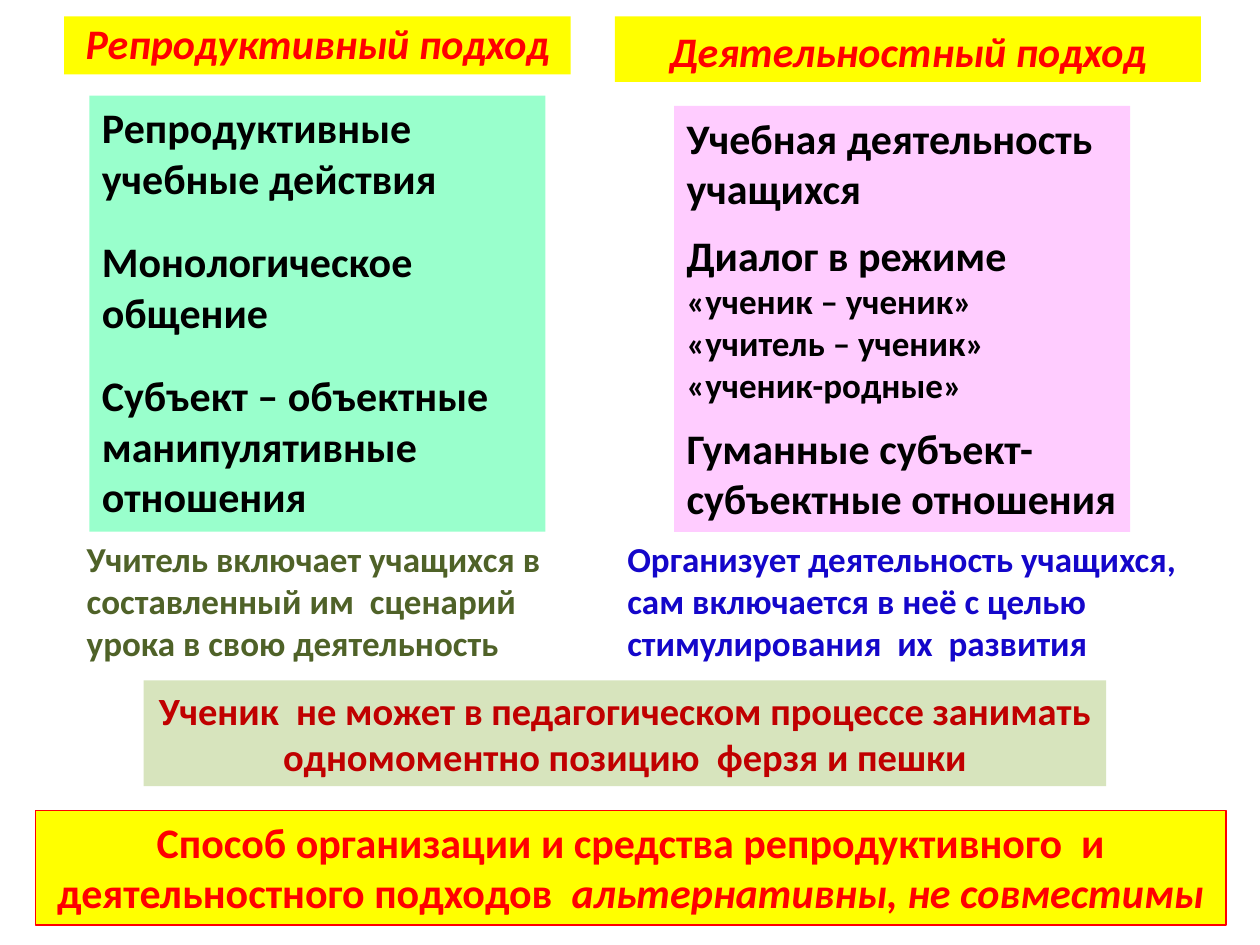
from pptx import Presentation
from pptx.dml.color import RGBColor
from pptx.enum import text as t
from pptx.util import Pt

FONT = "Calibri"
YELLOW, RED, BLACK = "FFFF00", "FF0000", "000000"

# Content: a paragraph is (text, size, space before)
HEADINGS = [
    ("Репродуктивный подход", (36.7, 9.4, 289.4, 33.1)),
    ("Деятельностный подход", (351.4, 9.4, 334.8, 37.4)),
]
FEATURES = [
    ((51.1, 54.7, 260.6, 249.1), "99FFCC", [
        ("Репродуктивные учебные действия", 24, 0),
        ("Монологическое общение", 24, 19),
        ("Субъект – объектные манипулятивные отношения", 24, 19),
    ]),
    ((385.2, 60.5, 260.6, 243.4), "FFCCFF", [
        ("Учебная деятельность учащихся", 24, 0),
        ("Диалог в режиме", 24, 9.5),
        ("«ученик – ученик»", 20, 0),
        ("«учитель – ученик»", 20, 0),
        ("«ученик-родные»", 20, 0),
        ("Гуманные субъект- субъектные отношения", 24, 9.5),
    ]),
]
TEACHER_ROLES = [
    ("Учитель включает учащихся в составленный им  сценарий "
     "урока в свою деятельность", (42.5, 303.8, 277.9, 79.9), "4F6228"),
    ("Организует деятельность учащихся, сам включается в неё с целью "
     "стимулирования  их  развития", (351.4, 303.8, 329, 79.9), "1406CA"),
]
PUPIL_NOTE = ("Ученик  не может в педагогическом процессе занимать "
              "одномоментно позицию  ферзя и пешки")
CONCLUSION = ("Способ организации и средства репродуктивного  и "
              "деятельностного подходов  ")
CONCLUSION_STRESS = "альтернативны, не совместимы"


def color(value):
    return RGBColor.from_string(value)


def add_box(page, at, fill=None, line=None, anchor=t.MSO_ANCHOR.TOP):
    box = page.shapes.add_textbox(*(Pt(length) for length in at))
    if fill:
        box.fill.solid()
        box.fill.fore_color.rgb = color(fill)
    if line:
        box.line.color.rgb = color(line)
        box.line.width = Pt(0.75)
    frame = box.text_frame
    frame.word_wrap = True
    frame.auto_size = t.MSO_AUTO_SIZE.NONE
    frame.vertical_anchor = anchor
    return frame


def add_span(para, text, size=24, ink=BLACK, italic=False):
    span = para.add_run()
    span.text = text
    font = span.font
    font.name, font.size, font.bold, font.italic = FONT, Pt(size), True, italic
    font.color.rgb = color(ink)


def main():
    deck = Presentation()
    deck.slide_width, deck.slide_height = Pt(720), Pt(540)
    page = deck.slides.add_slide(deck.slide_layouts[6])

    # Column headings
    for text, at in HEADINGS:
        para = add_box(page, at, YELLOW, anchor=t.MSO_ANCHOR.BOTTOM).paragraphs[0]
        para.alignment = t.PP_ALIGN.CENTER
        add_span(para, text, ink=RED, italic=True)

    # Features of each approach
    for at, fill, items in FEATURES:
        frame = add_box(page, at, fill)
        for index, (text, size, gap) in enumerate(items):
            para = frame.add_paragraph() if index else frame.paragraphs[0]
            para.space_before = Pt(gap)
            add_span(para, text, size)

    # What the teacher does
    for text, at, ink in TEACHER_ROLES:
        add_span(add_box(page, at).paragraphs[0], text, 20, ink)

    # Note and conclusion
    para = add_box(page, (82.1, 388.8, 550.1, 60.5), "D7E4BD").paragraphs[0]
    para.alignment = t.PP_ALIGN.CENTER
    add_span(para, PUPIL_NOTE, 22, "C00000")

    para = add_box(page, (20.2, 463, 680.4, 65.5), YELLOW, RED).paragraphs[0]
    para.alignment = t.PP_ALIGN.CENTER
    add_span(para, CONCLUSION, ink=RED)
    add_span(para, CONCLUSION_STRESS, ink=RED, italic=True)

    deck.save("out.pptx")


if __name__ == "__main__":
    main()
